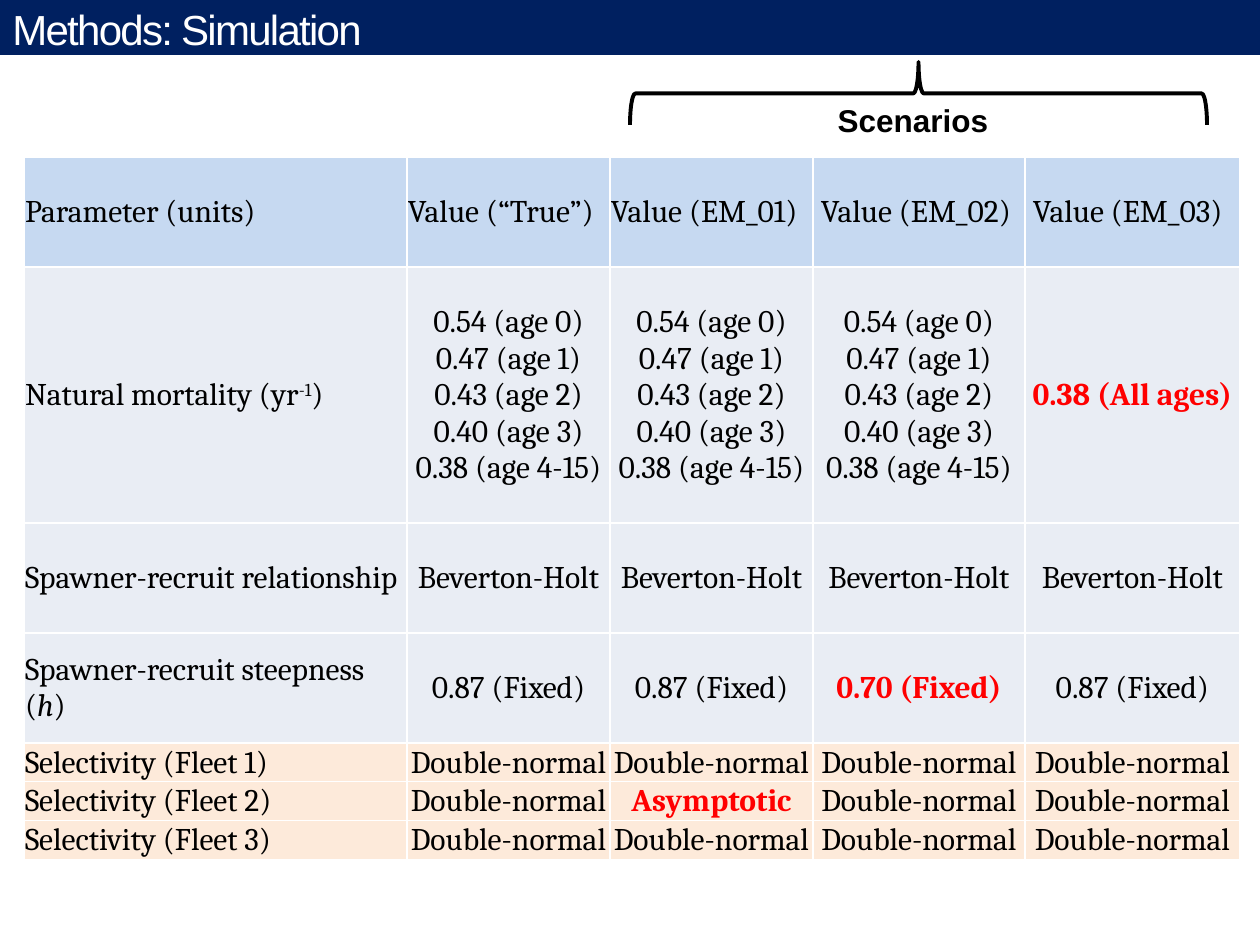
import pptx
import pptx.dml.color
import pptx.enum.shapes
import pptx.enum.text
import pptx.oxml
import pptx.oxml.ns
import pptx.util

EMU_PER_PX = 914400 // 126
COLORS = {"navy": "002060", "white": "FFFFFF", "black": "000000", "red": "FF0000",
          "header": "C6D9F1", "biology": "E9EDF4", "selectivity": "FDEADA"}
LEFT = pptx.enum.text.PP_ALIGN.LEFT
CENTER = pptx.enum.text.PP_ALIGN.CENTER
MIDDLE = pptx.enum.text.MSO_ANCHOR.MIDDLE
SHAPES = pptx.enum.shapes.MSO_SHAPE

COLUMN_WIDTHS = [383, 203, 203, 212, 215]
AGES = "0.54 (age 0)\n0.47 (age 1)\n0.43 (age 2)\n0.40 (age 3)\n0.38 (age 4-15)"
HOLT = "Beverton-Holt"
STEEPNESS = "0.87 (Fixed)"
NORMAL = "Double-normal"
# Fill, height and cell texts of each row; a list is one line of (text, style) spans.
ROWS = [
    ("header", 110, ["Parameter (units)", "Value (“True”)", "Value (EM_01)",
                     " Value (EM_02)", " Value (EM_03)"]),
    ("biology", 256, [[("Natural mortality (yr", ""), ("-1", "super"), (")", "")],
                      AGES, AGES, AGES, "0.38 (All ages)"]),
    ("biology", 110, ["Spawner-recruit relationship"] + [HOLT] * 4),
    ("biology", 110, [[("Spawner-recruit steepness (", ""), ("h", "italic"), (")", "")],
                      STEEPNESS, STEEPNESS, "0.70 (Fixed)", STEEPNESS]),
    ("selectivity", 37, ["Selectivity (Fleet 1)"] + [NORMAL] * 4),
    ("selectivity", 37, ["Selectivity (Fleet 2)", NORMAL, "Asymptotic", NORMAL, NORMAL]),
    ("selectivity", 37, ["Selectivity (Fleet 3)"] + [NORMAL] * 4),
]
CHANGED = {(1, 4), (3, 3), (5, 2)}


def px(length):
    return pptx.util.Emu(length * EMU_PER_PX)


def rgb(name):
    return pptx.dml.color.RGBColor.from_string(COLORS[name])


def style_paragraph(para, font, size, color, align=LEFT, bold=False):
    para.alignment = align
    para.font.name = font
    para.font.size = pptx.util.Pt(size)
    para.font.bold = bold
    para.font.color.rgb = rgb(color)


def add_label(page, box, text, size, color, align=LEFT, bold=False, spacing=0):
    label = page.shapes.add_textbox(*map(px, box))
    frame = label.text_frame
    frame.word_wrap = True
    frame.vertical_anchor = MIDDLE
    para = frame.paragraphs[0]
    span = para.add_run()
    span.text = text
    style_paragraph(para, "Arial", size, color, align, bold)
    if spacing:
        span.font._element.set("spc", str(spacing))


def add_outline_shape(page, kind, box, line, width, fill=None):
    shape = page.shapes.add_shape(kind, *map(px, box))
    shape.shadow.inherit = False
    if fill:
        shape.fill.solid()
        shape.fill.fore_color.rgb = rgb(fill)
    else:
        shape.fill.background()
    shape.line.color.rgb = rgb(line)
    shape.line.width = pptx.util.Pt(width)
    return shape


def add_borders(cell):
    properties = cell._tc.get_or_add_tcPr()
    for side in ("lnL", "lnR", "lnT", "lnB"):
        properties.append(pptx.oxml.parse_xml(
            f'<a:{side} {pptx.oxml.ns.nsdecls("a")} w="12700"><a:solidFill>'
            f'<a:srgbClr val="{COLORS["white"]}"/></a:solidFill></a:{side}>'))


def fill_cell(cell, content, fill, align, changed):
    add_borders(cell)
    cell.fill.solid()
    cell.fill.fore_color.rgb = rgb(fill)
    cell.vertical_anchor = MIDDLE
    cell.margin_left = cell.margin_right = cell.margin_top = px(1)
    cell.margin_bottom = 0
    frame = cell.text_frame
    if isinstance(content, str):
        frame.text = content
    else:
        for text, style in content:
            span = frame.paragraphs[0].add_run()
            span.text = text
            if style == "italic":
                span.font.italic = True
            elif style == "super":
                span.font._element.set("baseline", "30000")
    for para in frame.paragraphs:
        style_paragraph(para, "Cambria", 18, "red" if changed else "black", align, changed)


def add_parameter_table(page, left, top):
    heights = [height for _, height, _ in ROWS]
    table = page.shapes.add_table(len(ROWS), len(COLUMN_WIDTHS), px(left), px(top),
                                  px(sum(COLUMN_WIDTHS)), px(sum(heights))).table
    # Every cell sets its own look, so the style's header and bands are off.
    table.first_row = table.horz_banding = False
    for column, width in zip(table.columns, COLUMN_WIDTHS):
        column.width = px(width)
    for i, (fill, height, contents) in enumerate(ROWS):
        table.rows[i].height = px(height)
        for j, content in enumerate(contents):
            align = CENTER if i and j else LEFT
            fill_cell(table.cell(i, j), content, fill, align, (i, j) in CHANGED)


def main():
    deck = pptx.Presentation()
    deck.slide_width, deck.slide_height = px(1260), px(945)
    page = deck.slides.add_slide(deck.slide_layouts[6])
    add_outline_shape(page, SHAPES.RECTANGLE, (0, 0, 1260, 53), "navy", 2, "navy")
    add_label(page, (0, -13, 1124, 84), "Methods: Simulation", 24, "white", spacing=-100)
    add_parameter_table(page, 24, 157)
    brace = add_outline_shape(page, SHAPES.LEFT_BRACE, (887, -195, 63, 577), "black", 2.25)
    brace.rotation = 90
    add_label(page, (703, 94, 420, 51), "Scenarios", 18, "black", CENTER, bold=True)
    deck.save("out.pptx")


if __name__ == "__main__":
    main()
